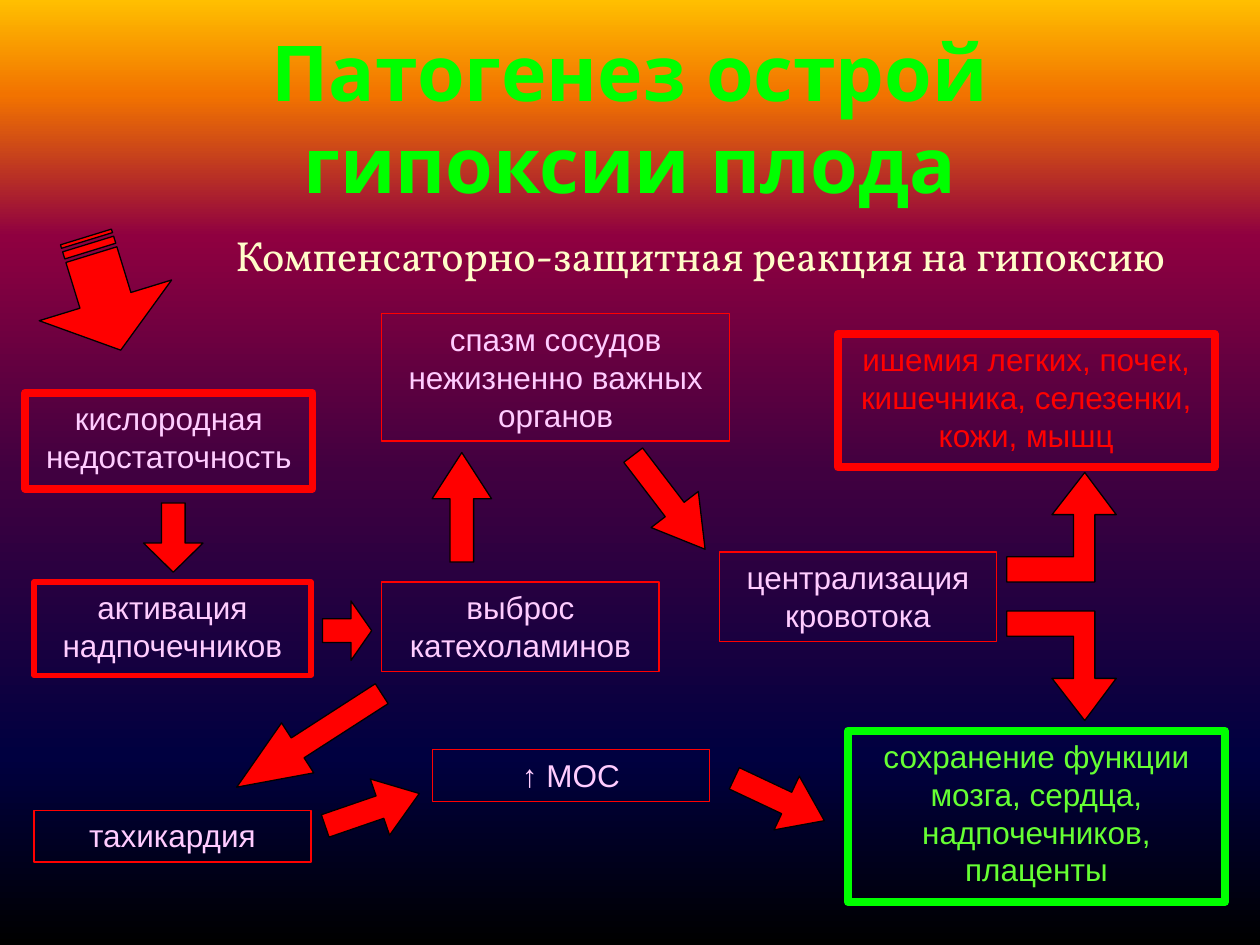
import pptx
import pptx.dml.color
import pptx.enum.shapes
import pptx.enum.text
import pptx.oxml
import pptx.oxml.ns
import pptx.util

Pt = pptx.util.Pt
RGBColor = pptx.dml.color.RGBColor
PRESET = pptx.enum.shapes.MSO_SHAPE
ALIGN = pptx.enum.text.PP_ALIGN
ANCHOR = pptx.enum.text.MSO_ANCHOR
AUTOFIT = pptx.enum.text.MSO_AUTO_SIZE

RED = RGBColor(0xFF, 0x00, 0x00)
GREEN = RGBColor(0x00, 0xFF, 0x00)
LIME = RGBColor(0x66, 0xFF, 0x33)
PINK = RGBColor(0xFF, 0xCC, 0xFF)
CREAM = RGBColor(0xFF, 0xFC, 0xC9)
BLACK = RGBColor(0x00, 0x00, 0x00)
SUNSET = [
    (0, BLACK),
    (20, RGBColor(0x00, 0x00, 0x40)),
    (50, RGBColor(0x40, 0x00, 0x40)),
    (75, RGBColor(0x8F, 0x00, 0x40)),
    (90, RGBColor(0xF2, 0x73, 0x00)),
    (100, RGBColor(0xFF, 0xBF, 0x00)),
]

STAGES = [
    ("кислородная недостаточность", (14.4, 224.6, 164.2, 54.7), RED, 4.5, PINK),
    ("активация надпочечников", (19.4, 332.6, 158.4, 53.3), RED, 3, PINK),
    ("тахикардия", (19.4, 463, 158.4, 29.5), RED, 0.75, PINK),
    ("↑ МОС", (247, 428.4, 158.4, 29.5), RED, 0.75, PINK),
    ("спазм сосудов нежизненно важных органов", (218.2, 179.3, 198.7, 72.7), RED, 0.75, PINK),
    ("централизация кровотока", (411.1, 315.4, 158.4, 51.1), RED, 0.75, PINK),
    ("выброс катехоламинов", (218.2, 332.6, 158.4, 51.1), RED, 0.75, PINK),
    ("ишемия легких, почек, кишечника, селезенки, кожи, мышц",
     (478.8, 190.8, 215.3, 76.3), RED, 4.5, RED),
    ("сохранение функции мозга, сердца, надпочечников, плаценты",
     (484.6, 417.6, 215.3, 97.9), GREEN, 4.5, LIME),
]

ARROW_THICKNESS = 34
STEP_ARROWS = [
    (127.4, 406.1, 98.6, 147.2, 1.218),
    (232.6, 272.9, 62.6, 270, 0.775),
    (348.5, 270, 67.7, 52.6, 0.841),
    (184.3, 445.7, 56.9, 341, 0.7),
    (416.9, 439.9, 56.9, 25.2, 0.7),
    (79.2, 290.2, 39.6, 90, 0.49),
    (184.3, 343.4, 28.1, 0, 0.421),
]

BRANCH_LEFT = 575.3
BRANCH_OUTLINE = [(0, 0), (50.4, 0), (50.4, 38.5), (62.6, 38.5), (44.6, 62.6),
                  (25.9, 38.5), (38.2, 38.5), (38.2, 14.4), (0, 14.4)]


def points(values):
    return [Pt(value) for value in values]


def paint_background(slide):
    fill = slide.background.fill
    fill.gradient()
    fill.gradient_angle = 90
    stops = slide.element.find(".//" + pptx.oxml.ns.qn("a:gsLst"))
    for stop in list(stops):
        stops.remove(stop)
    for position, color in SUNSET:
        stops.append(pptx.oxml.parse_xml(
            f'<a:gs {pptx.oxml.ns.nsdecls("a")} pos="{position * 1000}">'
            f'<a:srgbClr val="{color}"/></a:gs>'))


def write_text(holder, text, color, size, face, align, bold=False,
               anchor=ANCHOR.TOP, autofit=AUTOFIT.SHAPE_TO_FIT_TEXT):
    frame = holder.text_frame
    frame.text = text
    paragraph = frame.paragraphs[0]
    paragraph.alignment = align
    frame_format = {"word_wrap": True, "auto_size": autofit, "vertical_anchor": anchor}
    for attribute, value in frame_format.items():
        setattr(frame, attribute, value)
    font = paragraph.runs[0].font
    font_format = {"name": face, "size": Pt(size), "bold": bold}
    for attribute, value in font_format.items():
        setattr(font, attribute, value)
    font.color.rgb = color


def add_title(slide, text):
    title = slide.shapes.title
    place = dict(zip(("left", "top", "width", "height"), points((36, 21.6, 648, 90))))
    for attribute, value in place.items():
        setattr(title, attribute, value)
    write_text(title, text, GREEN, 44, "League Spartan", ALIGN.CENTER, True,
               ANCHOR.MIDDLE, AUTOFIT.NONE)


def add_subtitle(slide, text):
    subtitle = slide.shapes.add_textbox(*points((127.4, 127.4, 567.4, 36)))
    write_text(subtitle, text, CREAM, 24, "Vollkorn", ALIGN.LEFT)


def add_stage(slide, text, place, border, border_width, color):
    stage = slide.shapes.add_shape(PRESET.RECTANGLE, *points(place))
    stage.shadow.inherit = False
    stage.fill.background()
    stage.line.color.rgb = border
    stage.line.width = Pt(border_width)
    write_text(stage, text, color, 18, "Arial", ALIGN.CENTER)


def style_arrow(arrow):
    arrow.shadow.inherit = False
    arrow.fill.solid()
    arrow.fill.fore_color.rgb = RED
    arrow.line.color.rgb = BLACK
    arrow.line.width = Pt(0.75)


def add_arrow(slide, preset, place, angle, shaft, head):
    arrow = slide.shapes.add_shape(preset, *points(place))
    arrow.rotation = angle
    arrow.adjustments[0] = shaft
    arrow.adjustments[1] = head
    style_arrow(arrow)


def add_branch(slide, start, direction):
    outline = [(Pt(BRANCH_LEFT + x), Pt(start + direction * y)) for x, y in BRANCH_OUTLINE]
    builder = slide.shapes.build_freeform(*outline[0], scale=1.0)
    builder.add_line_segments(outline[1:], close=True)
    style_arrow(builder.convert_to_shape())


def main():
    deck = pptx.Presentation()
    deck.slide_width, deck.slide_height = points((720, 540))
    slide = deck.slides.add_slide(deck.slide_layouts[5])
    paint_background(slide)
    add_title(slide, "Патогенез острой гипоксии плода")
    add_subtitle(slide, "Компенсаторно-защитная реакция на гипоксию")
    for stage in STAGES:
        add_stage(slide, *stage)
    add_arrow(slide, PRESET.STRIPED_RIGHT_ARROW, (25.2, 128.2, 67.7, 79.2), 72.9, 0.385, 0.44)
    for left, top, length, angle, head in STEP_ARROWS:
        add_arrow(slide, PRESET.RIGHT_ARROW, (left, top, length, ARROW_THICKNESS),
                  angle, 0.399, head)
    add_branch(slide, 332.6, -1)
    add_branch(slide, 349.2, 1)
    deck.save("out.pptx")


if __name__ == "__main__":
    main()
